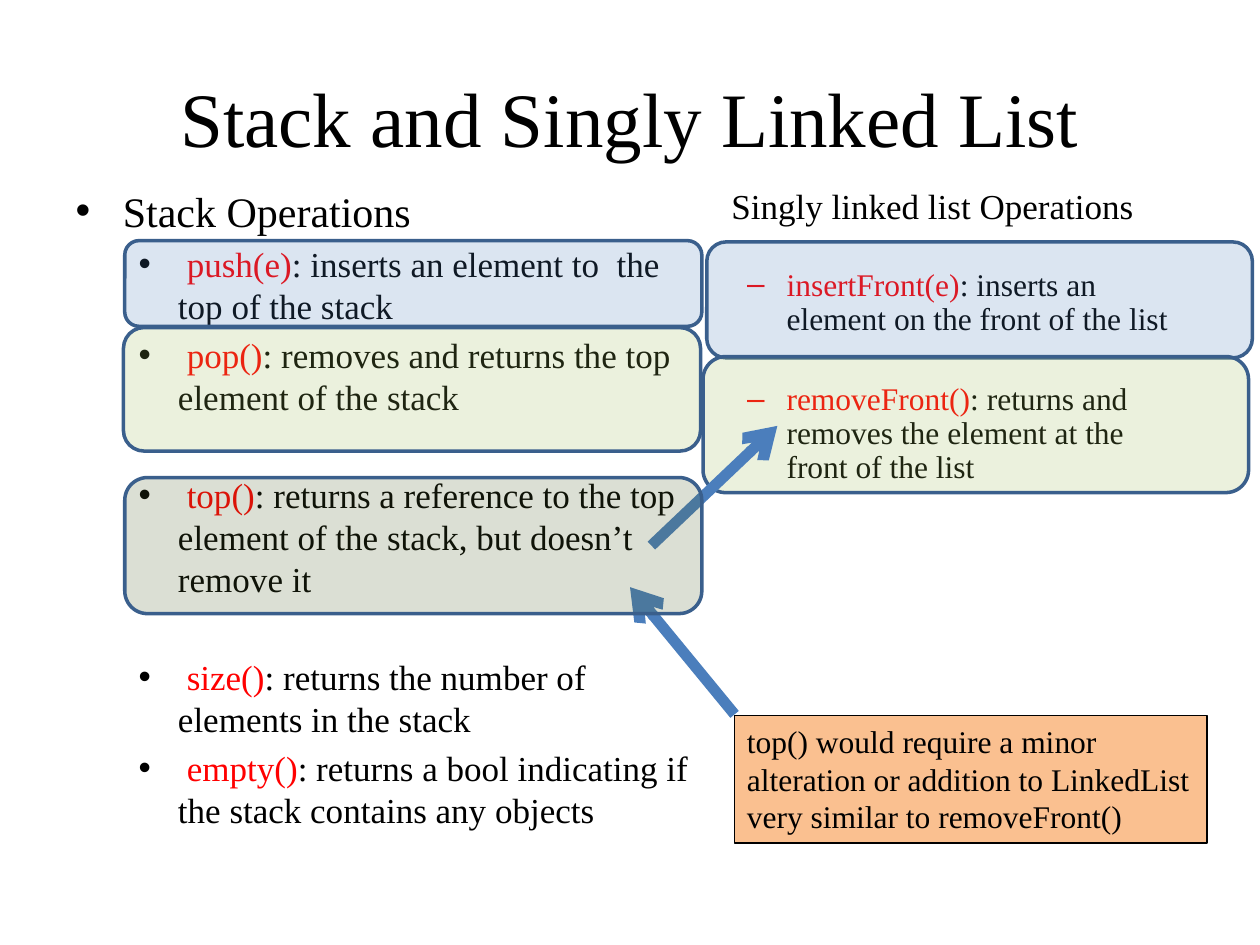
from dataclasses import dataclass

from lxml.etree import SubElement
from pptx import Presentation
from pptx.dml.color import RGBColor
from pptx.enum.shapes import MSO_CONNECTOR as Link, MSO_SHAPE as Kind
from pptx.enum.text import MSO_ANCHOR as Anchor, MSO_AUTO_SIZE as Fit
from pptx.oxml.ns import qn
from pptx.util import Inches, Pt

FONT = "Times New Roman"
BLACK, RED = "000000", "FF0000"
BLUE, GREEN, OLIVE = "4F81BD", "9BBB59", "4F6228"
EDGE, ARROW, PEACH = "3A5F8C", "4B7EBC", "FAC090"


@dataclass
class Item:
    name: str
    text: str
    gap: float = 4  # points above the item


@dataclass
class Card:
    left: float
    top: float
    width: float
    height: float
    color: str


@dataclass
class Column:
    box: tuple
    head: str
    size: int
    marked: bool
    bullet: str
    lead: str
    item_size: int
    spacing: float
    items: list


STACK = Column((0.5, 1.42, 5.08, 5.83), "Stack Operations", 24, True, "•", " ", 20, 1.0, [
    Item("push(e)", ": inserts an element to  the top of the stack"),
    Item("pop()", ": removes and returns the top element of the stack"),
    Item("top()", ": returns a reference to the top element of the stack, "
                  "but doesn’t remove it", 32),
    Item("size()", ": returns the number of elements in the stack", 32),
    Item("empty()", ": returns a bool indicating if the stack contains any objects"),
])
LINKED = Column((5.33, 1.45, 4.17, 5), "Singly linked list Operations", 20, False, "–", "", 18, 0.9, [
    Item("insertFront(e)", ": inserts an element on the front of the list", 24),
    Item("removeFront()", ": returns and removes the element at the front of the list", 26.5),
])
PAIRS = [
    Card(0.99, 1.91, 4.58, 0.68, BLUE),
    Card(5.61, 1.92, 4.33, 0.92, BLUE),
    Card(0.98, 2.6, 4.58, 0.98, GREEN),
    Card(5.58, 2.83, 4.33, 1.08, GREEN),
]
TOP = Card(0.99, 3.79, 4.58, 1.08, OLIVE)
NOTE = ["top() would require a minor",
        "alteration or addition to LinkedList",
        "very similar to removeFront()"]


def rgb(code: str) -> RGBColor:
    return RGBColor.from_string(code)


def place(shape, box: tuple) -> None:
    for side, value in zip(("left", "top", "width", "height"), box):
        setattr(shape, side, Inches(value))


def add_run(para, text: str, size: float, color: str = BLACK) -> None:
    run = para.add_run()
    run.text = text
    for key, value in {"name": FONT, "size": Pt(size)}.items():
        setattr(run.font, key, value)
    run.font.color.rgb = rgb(color)


def fill_column(holder, col: Column) -> None:
    place(holder, col.box)
    frame = holder.text_frame
    frame.auto_size = Fit.NONE
    head = frame.paragraphs[0]
    head.line_spacing = col.spacing
    add_run(head, col.head, col.size)
    if not col.marked:
        props = head._p.get_or_add_pPr()
        props.set("indent", "0")
        SubElement(props, qn("a:buNone"))
    for item in col.items:
        para = frame.add_paragraph()
        styles = {"level": 1, "line_spacing": col.spacing, "space_before": Pt(item.gap)}
        for key, value in styles.items():
            setattr(para, key, value)
        SubElement(para._p.get_or_add_pPr(), qn("a:buChar"), char=col.bullet)
        if col.lead:
            add_run(para, col.lead, col.item_size)
        add_run(para, item.name, col.item_size, RED)
        add_run(para, item.text, col.item_size)


def add_box(slide, kind: Kind, box: tuple, fill: str, edge: str, weight: float):
    shape = slide.shapes.add_shape(kind, *map(Inches, box))
    shape.shadow.inherit = False
    shape.fill.solid()
    shape.fill.fore_color.rgb = rgb(fill)
    shape.line.color.rgb = rgb(edge)
    shape.line.width = Pt(weight)
    return shape


def add_card(slide, card: Card) -> None:
    """Draw a rounded overlay that lets the text below show through."""
    box = (card.left, card.top, card.width, card.height)
    shape = add_box(slide, Kind.ROUNDED_RECTANGLE, box, card.color, EDGE, 2)
    tint = shape._element.spPr.find(qn("a:solidFill"))[0]
    SubElement(tint, qn("a:alpha"), val="20000")


def add_arrow(slide, start: tuple, end: tuple) -> None:
    line = slide.shapes.add_connector(Link.STRAIGHT, *map(Inches, start + end))
    line.line.color.rgb = rgb(ARROW)
    line.line.width = Pt(6.25)
    SubElement(line.line._get_or_add_ln(), qn("a:tailEnd"), type="arrow")
    SubElement(line._element.spPr, qn("a:effectLst"))


def add_note(slide, box: tuple, lines: list) -> None:
    frame = add_box(slide, Kind.RECTANGLE, box, PEACH, BLACK, 0.75).text_frame
    styles = {"word_wrap": False, "auto_size": Fit.SHAPE_TO_FIT_TEXT,
              "vertical_anchor": Anchor.TOP}
    for key, value in styles.items():
        setattr(frame, key, value)
    for i, text in enumerate(lines):
        para = frame.add_paragraph() if i else frame.paragraphs[0]
        para._p.get_or_add_pPr().set("algn", "l")
        add_run(para, text, 18)


def main() -> None:
    deck = Presentation()
    deck.slide_width, deck.slide_height = Inches(10), Inches(7.5)
    slide = deck.slides.add_slide(deck.slide_layouts[3])
    title, left, right = slide.placeholders
    place(title, (0.5, 0.3, 9, 1.25))
    add_run(title.text_frame.paragraphs[0], "Stack and Singly Linked List", 44)
    fill_column(left, STACK)
    fill_column(right, LINKED)
    for card in PAIRS:
        add_card(slide, card)
    add_arrow(slide, (5.17, 4.33), (6.17, 3.38))
    add_note(slide, (5.83, 5.68, 3.75, 1.01), NOTE)
    add_arrow(slide, (5.83, 5.67), (5, 4.66))
    add_card(slide, TOP)
    deck.save("out.pptx")


if __name__ == "__main__":
    main()
